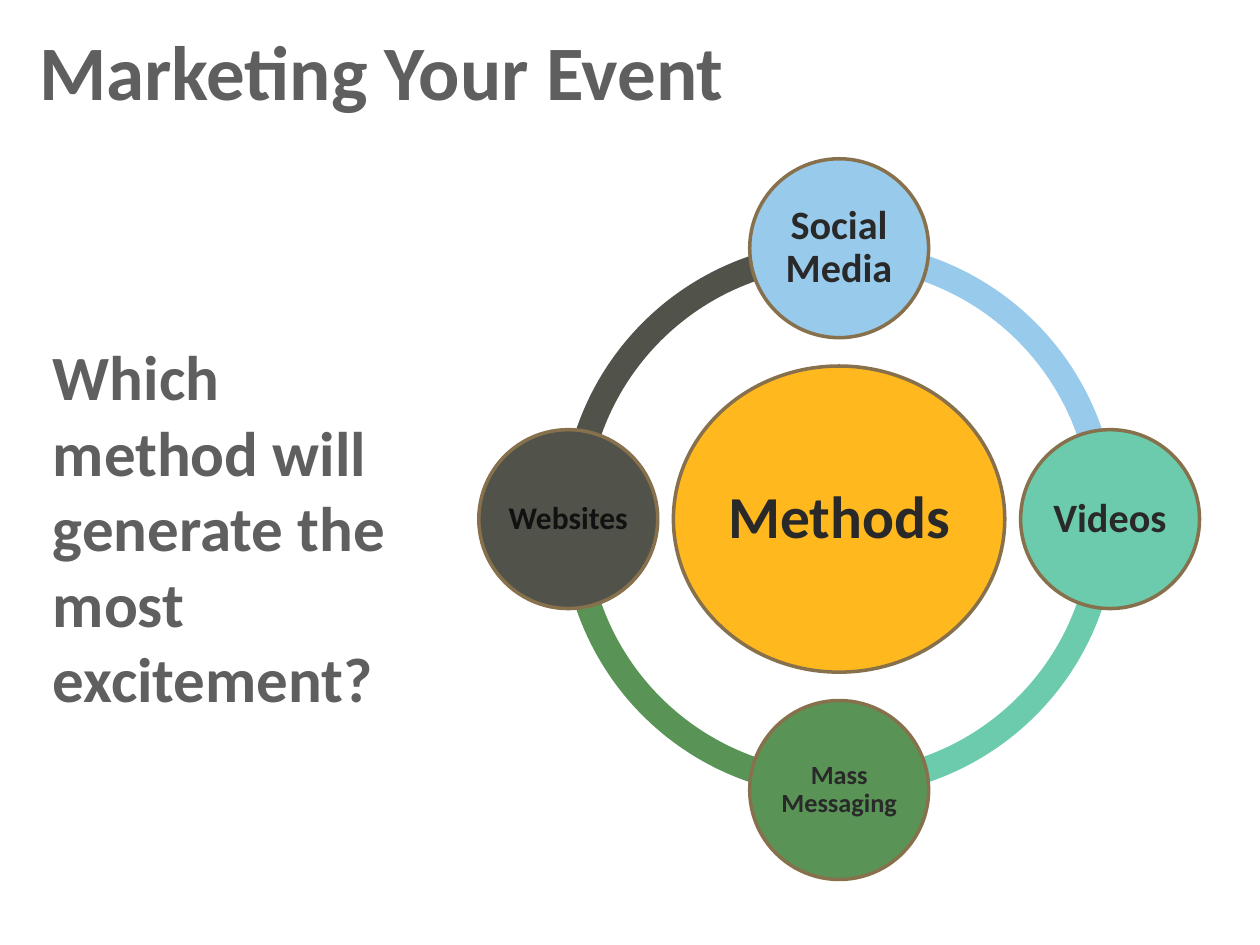
from dataclasses import dataclass

from pptx import Presentation
from pptx import util as u
from pptx.dml.color import RGBColor
from pptx.enum import shapes, text


@dataclass(frozen=True)
class Theme:
    font: str = "Calibri"
    heading: str = "5F5F5F"
    label: str = "292929"
    dark_label: str = "111111"
    outline: str = "87714D"
    hub: str = "FFB81D"
    sky: str = "98CAEC"
    mint: str = "6CCBAC"
    green: str = "599456"
    slate: str = "51534A"
    title_size: int = 44
    question_size: int = 36
    hub_size: int = 34


@dataclass(frozen=True)
class Method:
    label: str
    fill: str
    size: int
    dx: int  # direction from the hub
    dy: int
    color: str


THEME = Theme()
METHODS = [
    Method("Social Media", THEME.sky, 23, 0, -1, THEME.label),
    Method("Videos", THEME.mint, 23, 1, 0, THEME.label),
    Method("Mass Messaging", THEME.green, 15, 0, 1, THEME.label),
    Method("Websites", THEME.slate, 18, -1, 0, THEME.dark_label),
]

CX, CY = 6.66, 4.12  # centre of the cycle
ORBIT = 2.15  # hub centre to method centre
RING = 4.41
NODE = 1.42
QUARTER = 54  # 90 degrees in adjustment units
FULL_TURN = 4 * QUARTER


def write(sp, words: str, size: int, color: str, inset: float = 0.05) -> None:
    """Fill a shape with one bold paragraph."""
    tf = sp.text_frame
    tf.text = words
    tf.word_wrap = True
    tf.margin_left = tf.margin_right = u.Inches(inset)
    tf.margin_top = tf.margin_bottom = u.Inches(inset)
    font = tf.paragraphs[0].runs[0].font
    font.name, font.size, font.bold = THEME.font, u.Pt(size), True
    font.color.rgb = RGBColor.from_string(color)


def centred_shape(s, kind, cx: float, cy: float, w: float, h: float, fill: str):
    """Add a filled shape around a centre point."""
    sp = s.shapes.add_shape(kind, u.Inches(cx - w / 2), u.Inches(cy - h / 2),
                            u.Inches(w), u.Inches(h))
    sp.shadow.inherit = False
    sp.fill.solid()
    sp.fill.fore_color.rgb = RGBColor.from_string(fill)
    return sp


def add_arc(s, index: int, fill: str) -> None:
    """Add the quarter ring that runs clockwise from the method at index."""
    sp = centred_shape(s, shapes.MSO_SHAPE.BLOCK_ARC, CX, CY, RING, RING, fill)
    sp.line.fill.background()
    start = (index + 3) * QUARTER % FULL_TURN
    sp.adjustments[0] = start
    sp.adjustments[1] = (start + QUARTER) % FULL_TURN
    sp.adjustments[2] = 0.046


def add_circle(s, cx: float, cy: float, w: float, h: float, fill: str,
               label: str, size: int, color: str, inset: float) -> None:
    """Add an outlined ellipse with a centred label."""
    sp = centred_shape(s, shapes.MSO_SHAPE.OVAL, cx, cy, w, h, fill)
    sp.line.color.rgb = RGBColor.from_string(THEME.outline)
    sp.line.width = u.Pt(2)
    write(sp, label, size, color, inset)
    sp.text_frame.vertical_anchor = text.MSO_ANCHOR.MIDDLE
    p = sp.text_frame.paragraphs[0]
    p.alignment = text.PP_ALIGN.CENTER
    p.line_spacing = 0.9


def main() -> None:
    prs = Presentation()
    prs.slide_width, prs.slide_height = u.Inches(10), u.Inches(7.5)
    s = prs.slides.add_slide(prs.slide_layouts[5])

    # Title
    title = s.shapes.title
    title.left, title.top = u.Inches(0.26), u.Inches(0.14)
    title.width, title.height = u.Inches(7.36), u.Inches(1.25)
    write(title, "Marketing Your Event", THEME.title_size, THEME.heading)
    title.text_frame.auto_size = text.MSO_AUTO_SIZE.NONE
    title.text_frame.vertical_anchor = text.MSO_ANCHOR.TOP
    title.text_frame.paragraphs[0].alignment = text.PP_ALIGN.LEFT

    # Ring, from the last quarter to the first
    for i, method in reversed(list(enumerate(METHODS))):
        add_arc(s, i, method.fill)

    # Hub and the methods around it
    add_circle(s, CX, CY, 2.63, 2.43, THEME.hub, "Methods",
               THEME.hub_size, THEME.label, 0.05)
    for m in METHODS:
        add_circle(s, CX + m.dx * ORBIT, CY + m.dy * ORBIT, NODE, NODE,
                   m.fill, m.label, m.size, m.color, 0.02)

    # Question
    question = s.shapes.add_textbox(u.Inches(0.37), u.Inches(2.63),
                                    u.Inches(3.13), u.Inches(3.13))
    write(question, "Which method will generate the most excitement?",
          THEME.question_size, THEME.heading)
    question.text_frame.auto_size = text.MSO_AUTO_SIZE.SHAPE_TO_FIT_TEXT

    prs.save("out.pptx")


if __name__ == "__main__":
    main()
